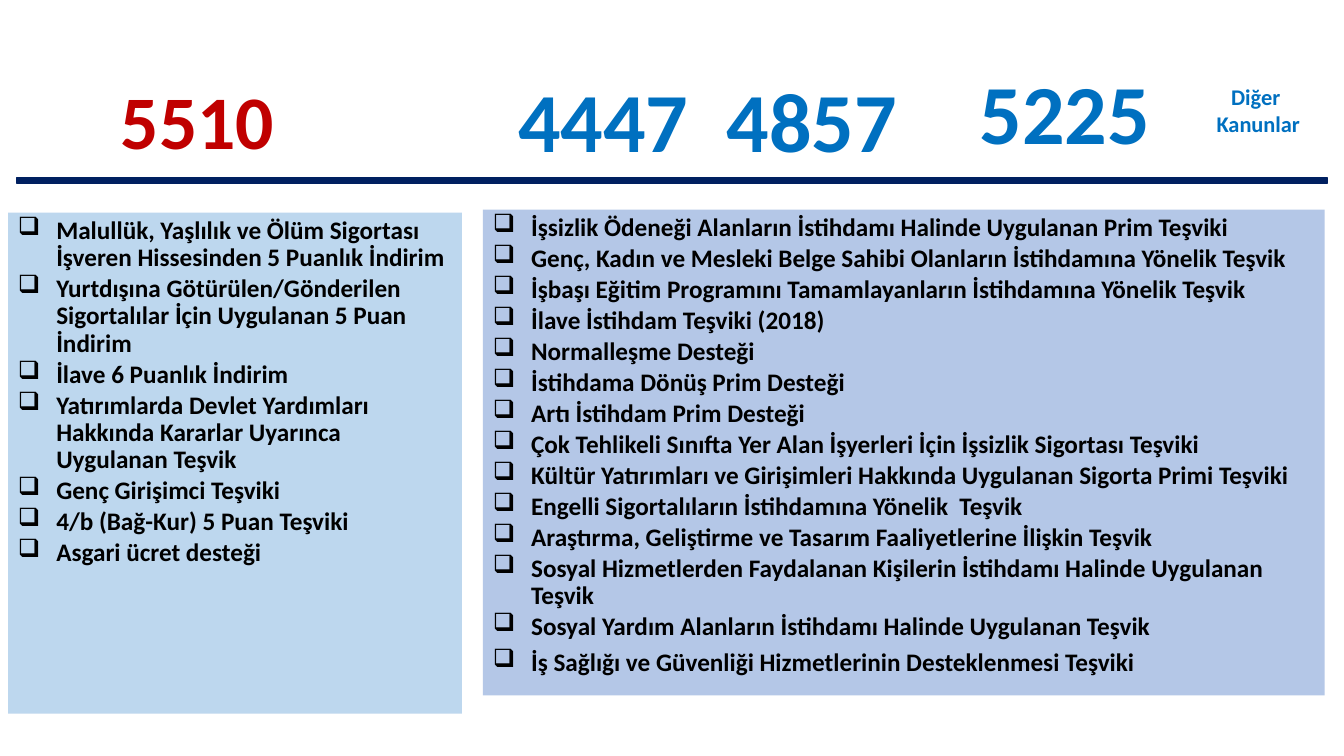
from dataclasses import dataclass

import pptx
import pptx.dml.color
import pptx.enum.shapes
import pptx.enum.text
import pptx.oxml
import pptx.oxml.ns
import pptx.util

ALIGN = pptx.enum.text.PP_ALIGN


@dataclass(frozen=True)
class Theme:
    font: str = "Calibri"
    red: str = "C00000"
    blue: str = "0070C0"
    navy: str = "002060"
    black: str = "000000"
    pale_blue: str = "BDD7EE"
    periwinkle: str = "B4C7E7"
    body_size: float = 18
    small_size: float = 16
    main_size: float = 54
    law_size: float = 60


@dataclass(frozen=True)
class Area:
    """Position and size in percent of the slide."""
    left: float
    top: float
    width: float
    height: float


@dataclass(frozen=True)
class Heading:
    area: Area
    lines: tuple[str, ...]
    size: float
    color: str
    align: ALIGN = ALIGN.LEFT
    wrap: bool = True


@dataclass(frozen=True)
class Panel:
    area: Area
    fill: str
    items: tuple[str, ...]
    wide_gaps: int = 0  # closing items that have the wider gap


THEME = Theme()
SLIDE_WIDTH = pptx.util.Inches(13.33)
SLIDE_HEIGHT = pptx.util.Inches(7.5)
INDENT = pptx.util.Inches(0.38)
ITEM_GAP, WIDE_GAP = 2.7, 6

RULE = Area(1.28, 23.47, 97.45, 0.8)

HEADINGS = (
    Heading(Area(8.25, 9.07, 14.93, 13.47), ("5510",), THEME.main_size, THEME.red),
    *(
        Heading(Area(left, top, 14.33, 14.8), (law,), THEME.law_size, THEME.blue, wrap=False)
        for law, left, top in (("4447", 37.81, 8.4), ("4857", 53.34, 8.4), ("5225", 72.17, 7.33))
    ),
    Heading(Area(89.57, 10.4, 8.1, 8.53), ("Diğer ", "Kanunlar"),
            THEME.small_size, THEME.blue, ALIGN.CENTER),
)

PANELS = (
    Panel(Area(0.6, 28.13, 33.76, 66.27), THEME.pale_blue, (
        "Malullük, Yaşlılık ve Ölüm Sigortası İşveren Hissesinden 5 Puanlık İndirim",
        "Yurtdışına Götürülen/Gönderilen Sigortalılar İçin Uygulanan 5 Puan İndirim",
        "İlave 6 Puanlık İndirim",
        "Yatırımlarda Devlet Yardımları Hakkında Kararlar Uyarınca Uygulanan Teşvik",
        "Genç Girişimci Teşviki",
        "4/b (Bağ-Kur) 5 Puan Teşviki",
        "Asgari ücret desteği",
    )),
    Panel(Area(35.93, 27.73, 62.64, 64.27), THEME.periwinkle, (
        "İşsizlik Ödeneği Alanların İstihdamı Halinde Uygulanan Prim Teşviki",
        "Genç, Kadın ve Mesleki Belge Sahibi Olanların İstihdamına Yönelik Teşvik",
        "İşbaşı Eğitim Programını Tamamlayanların İstihdamına Yönelik Teşvik",
        "İlave İstihdam Teşviki (2018)",
        "Normalleşme Desteği",
        "İstihdama Dönüş Prim Desteği",
        "Artı İstihdam Prim Desteği",
        "Çok Tehlikeli Sınıfta Yer Alan İşyerleri İçin İşsizlik Sigortası Teşviki",
        "Kültür Yatırımları ve Girişimleri Hakkında Uygulanan Sigorta Primi Teşviki",
        "Engelli Sigortalıların İstihdamına Yönelik  Teşvik",
        "Araştırma, Geliştirme ve Tasarım Faaliyetlerine İlişkin Teşvik",
        "Sosyal Hizmetlerden Faydalanan Kişilerin İstihdamı Halinde Uygulanan Teşvik",
        "Sosyal Yardım Alanların İstihdamı Halinde Uygulanan Teşvik",
        "İş Sağlığı ve Güvenliği Hizmetlerinin Desteklenmesi Teşviki",
    ), wide_gaps=2),
)


def rgb(color: str) -> pptx.dml.color.RGBColor:
    return pptx.dml.color.RGBColor.from_string(color)


def place(area: Area) -> tuple[int, int, int, int]:
    return (
        round(SLIDE_WIDTH * area.left / 100),
        round(SLIDE_HEIGHT * area.top / 100),
        round(SLIDE_WIDTH * area.width / 100),
        round(SLIDE_HEIGHT * area.height / 100),
    )


def add_bullet(para, symbol: str) -> None:
    properties = para._p.get_or_add_pPr()
    properties.set("marL", str(INDENT))
    properties.set("indent", str(-INDENT))
    bullet = pptx.oxml.parse_xml(f'<a:buChar {pptx.oxml.ns.nsdecls("a")} char="{symbol}"/>')
    properties.append(bullet)


def write(frame, text: str, *, first: bool, size: float, color: str, align: ALIGN = ALIGN.LEFT,
          bullet: str = "", line_spacing: float = 1, space_after: float = 0) -> None:
    para = frame.paragraphs[0] if first else frame.add_paragraph()
    if bullet:
        add_bullet(para, bullet)
    para.alignment = align
    para.line_spacing = line_spacing
    para.space_after = pptx.util.Pt(space_after)
    span = para.add_run()
    span.text = text
    span.font.name = THEME.font
    span.font.size = pptx.util.Pt(size)
    span.font.bold = True
    span.font.color.rgb = rgb(color)


def add_block(page, area: Area, fill: str):
    block = page.shapes.add_shape(pptx.enum.shapes.MSO_SHAPE.RECTANGLE, *place(area))
    block.shadow.inherit = False
    block.fill.solid()
    block.fill.fore_color.rgb = rgb(fill)
    block.line.fill.background()
    return block


def add_heading(page, heading: Heading) -> None:
    box = page.shapes.add_textbox(*place(heading.area))
    box.text_frame.word_wrap = heading.wrap
    for index, line in enumerate(heading.lines):
        write(box.text_frame, line, first=index == 0, size=heading.size,
              color=heading.color, align=heading.align)


def add_panel(page, panel: Panel) -> None:
    frame = add_block(page, panel.area, panel.fill).text_frame
    frame.word_wrap = True
    frame.vertical_anchor = pptx.enum.text.MSO_ANCHOR.TOP
    wide_from = len(panel.items) - panel.wide_gaps
    for index, item in enumerate(panel.items):
        write(frame, item, first=index == 0, size=THEME.body_size, color=THEME.black,
              bullet="❑", line_spacing=0.9,
              space_after=WIDE_GAP if index >= wide_from else ITEM_GAP)


def main() -> None:
    deck = pptx.Presentation()
    deck.slide_width, deck.slide_height = SLIDE_WIDTH, SLIDE_HEIGHT
    page = deck.slides.add_slide(deck.slide_layouts[6])

    # Rule under the law numbers
    rule = add_block(page, RULE, THEME.navy)
    rule.line.color.rgb = rgb(THEME.navy)
    rule.line.width = pptx.util.Pt(1)

    # Incentive lists
    for panel in PANELS:
        add_panel(page, panel)

    # Law numbers
    for heading in HEADINGS:
        add_heading(page, heading)

    deck.save("out.pptx")


if __name__ == "__main__":
    main()
